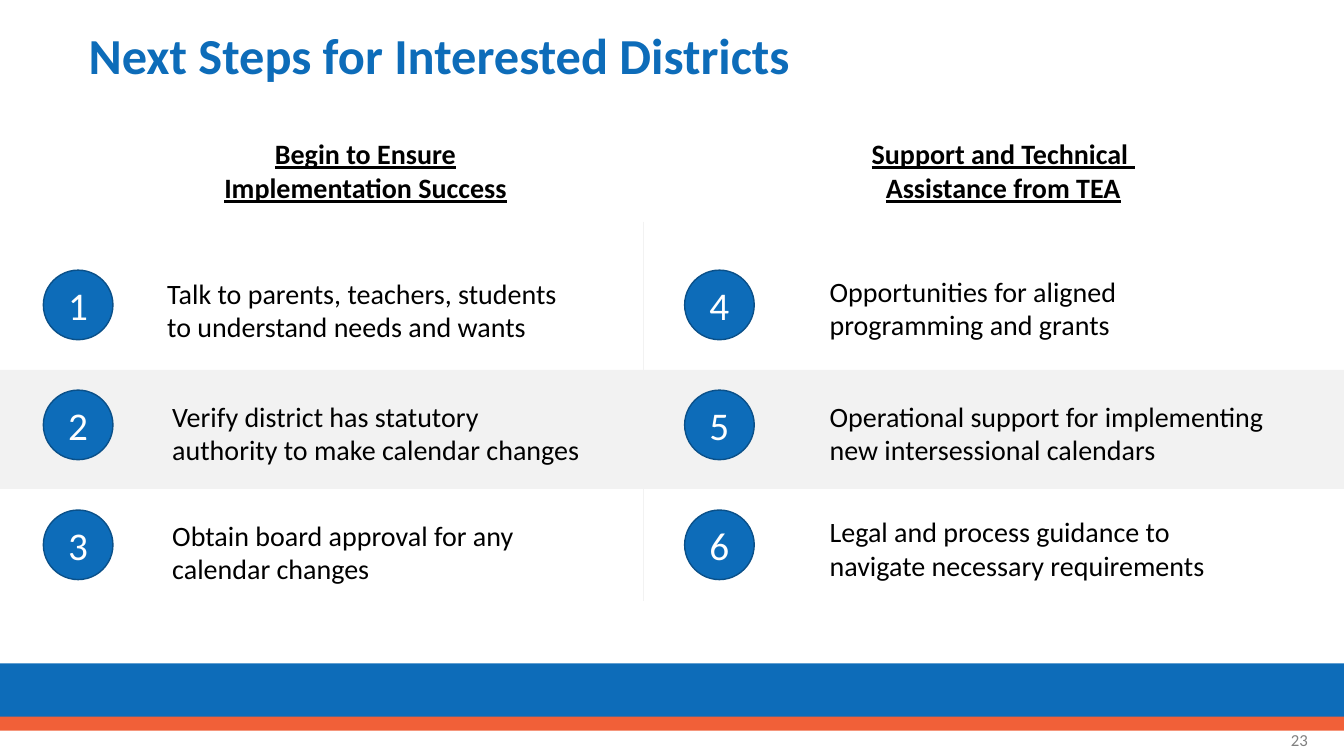
from pptx import Presentation
from pptx.dml.color import RGBColor
from pptx.enum.shapes import MSO_CONNECTOR, MSO_SHAPE
from pptx.enum.text import MSO_ANCHOR, PP_ALIGN
from pptx.oxml.ns import qn
from pptx.util import Inches, Pt
from lxml import etree

BLUE, DARK_BLUE, ORANGE = "0D6CB9", "0A5089", "F16038"
PALE, GRAY, BLACK, WHITE = "F2F2F2", "808080", "000000", "FFFFFF"
WIDTH, HEIGHT = 13.33, 7.5
ROW_TOP, ROW_STEP, CIRCLE = 2.68, 1.19, 0.69

# Each step: text, then left, top and width of its box relative to the circle
LEFT_STEPS = [
    ("Talk to parents, teachers, students to understand needs and wants", 1.13, 0.01, 4.34),
    ("Verify district has statutory authority to make calendar changes", 1.18, 0.04, 4.34),
    ("Obtain board approval for any calendar changes", 1.18, 0.03, 4.34),
]
RIGHT_STEPS = [
    ("Opportunities for aligned programming and grants", 1.34, -0.01, 4.34),
    ("Operational support for implementing new intersessional calendars", 1.34, 0.04, 4.77),
    ("Legal and process guidance to navigate necessary requirements", 1.34, 0, 4.34),
]


def rgb(color):
    return RGBColor.from_string(color)


def box(x, y, w, h):
    return [Inches(v) for v in (x, y, w, h)]


def write(tf, lines, size, color=BLACK, align=PP_ALIGN.LEFT, bold=False,
          underline=False, anchor=MSO_ANCHOR.TOP):
    tf.word_wrap = True
    tf.vertical_anchor = anchor
    for i, line in enumerate(lines):
        p = tf.paragraphs[0] if i == 0 else tf.add_paragraph()
        p.alignment = align
        r = p.add_run()
        r.text = line
        r.font.name = "Calibri"
        r.font.size = Pt(size)
        r.font.bold = bold
        r.font.underline = underline
        r.font.color.rgb = rgb(color)


def add_text(slide, x, y, w, h, lines, size, **style):
    write(slide.shapes.add_textbox(*box(x, y, w, h)).text_frame, lines, size, **style)


def add_filled(slide, kind, x, y, w, h, fill, line=None):
    sp = slide.shapes.add_shape(kind, *box(x, y, w, h))
    sp.shadow.inherit = False
    sp.fill.solid()
    sp.fill.fore_color.rgb = rgb(fill)
    if line:
        sp.line.color.rgb = rgb(line)
        sp.line.width = Pt(1)
    else:
        sp.line.fill.background()
    return sp


def add_title(slide, x, y, w, h):
    title = slide.shapes.title
    title.left, title.top, title.width, title.height = box(x, y, w, h)
    write(title.text_frame, ["Next Steps for Interested Districts"], 36, BLUE,
          bold=True, anchor=MSO_ANCHOR.MIDDLE)
    title.text_frame.paragraphs[0].line_spacing = 0.9


def add_footer(slide, y):
    add_filled(slide, MSO_SHAPE.RECTANGLE, 0, y, WIDTH, 0.58, BLUE)
    add_filled(slide, MSO_SHAPE.RECTANGLE, 0, y + 0.53, WIDTH, 0.14, ORANGE)
    add_text(slide, 10.07, y + 0.56, 3, 0.4, ["23"], 12, color=GRAY,
             align=PP_ALIGN.RIGHT, anchor=MSO_ANCHOR.MIDDLE)


def add_heading(slide, x, y, w, lines):
    add_text(slide, x, y, w, 0.77, lines, 20, align=PP_ALIGN.CENTER,
             bold=True, underline=True)


def add_steps(slide, x, y, first, steps):
    """Stack numbered circles, each with its text to the right."""
    for i, (text, dx, dy, w) in enumerate(steps):
        top = y + i * ROW_STEP
        sp = add_filled(slide, MSO_SHAPE.OVAL, x, top, CIRCLE, CIRCLE, BLUE, DARK_BLUE)
        write(sp.text_frame, [str(first + i)], 28, WHITE, PP_ALIGN.CENTER,
              anchor=MSO_ANCHOR.MIDDLE)
        add_text(slide, x + dx, top + dy, w, 0.77, [text], 20)


def add_divider(slide, x, top, bottom):
    line = slide.shapes.add_connector(MSO_CONNECTOR.STRAIGHT, *box(x, top, x, bottom))
    line.line.color.rgb = rgb(PALE)
    line.line.width = Pt(0.5)
    etree.SubElement(line._element.spPr, qn("a:effectLst"))


def main():
    prs = Presentation()
    prs.slide_width, prs.slide_height = Inches(WIDTH), Inches(HEIGHT)
    slide = prs.slides.add_slide(prs.slide_layouts[5])
    add_title(slide, 0.78, 0.17, 12.16, 0.82)
    add_footer(slide, 6.58)
    add_filled(slide, MSO_SHAPE.RECTANGLE, 0, 3.67, WIDTH, 1.18, PALE)
    add_heading(slide, 2.05, 1.31, 3.15, ["Begin to Ensure Implementation Success"])
    add_heading(slide, 7.53, 1.31, 4.84, ["Support and Technical ", "Assistance from TEA"])
    add_steps(slide, 0.43, ROW_TOP, 1, LEFT_STEPS)
    add_steps(slide, 6.79, ROW_TOP, 4, RIGHT_STEPS)
    add_divider(slide, 6.38, 2.2, 5.96)
    prs.save("out.pptx")


if __name__ == "__main__":
    main()
